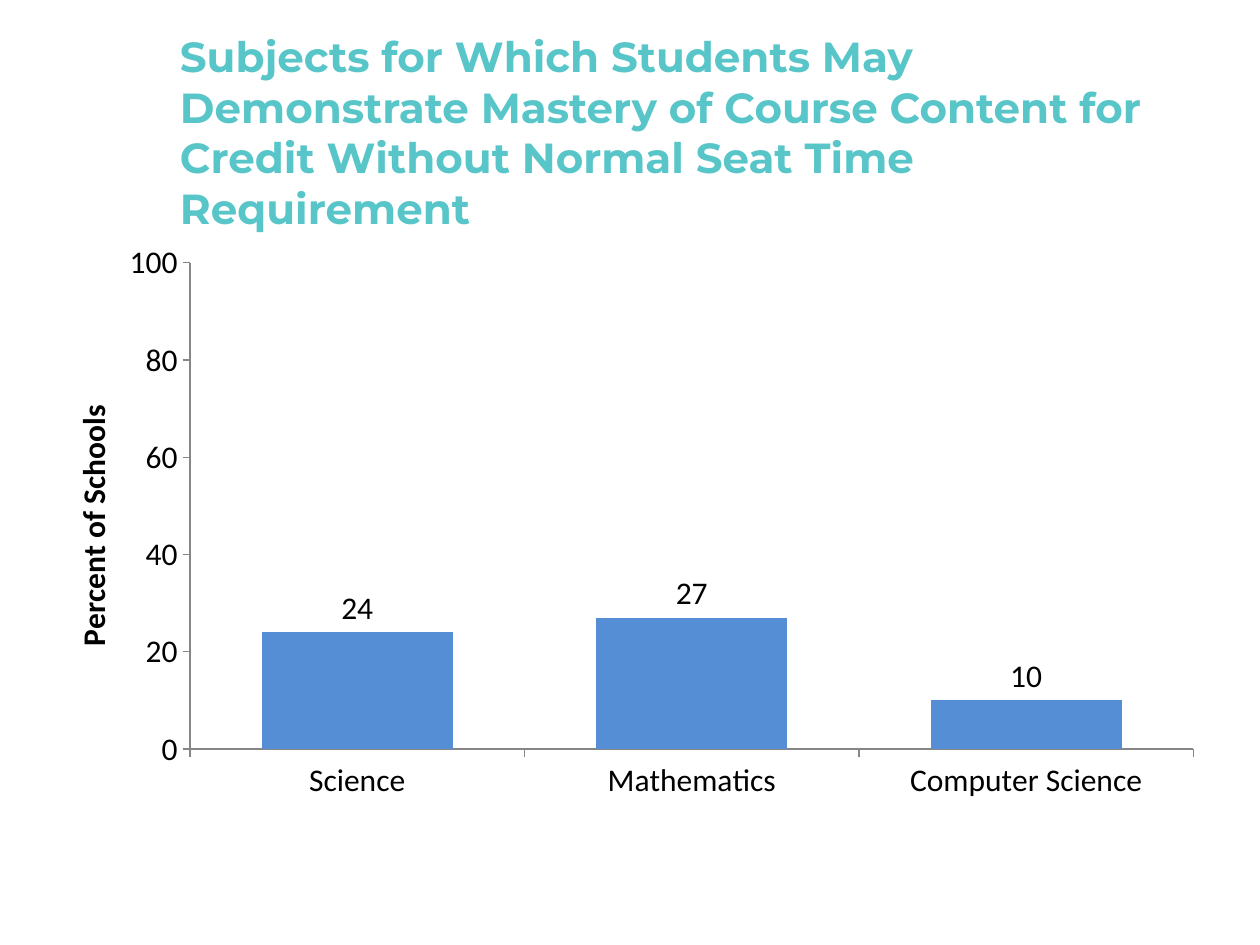
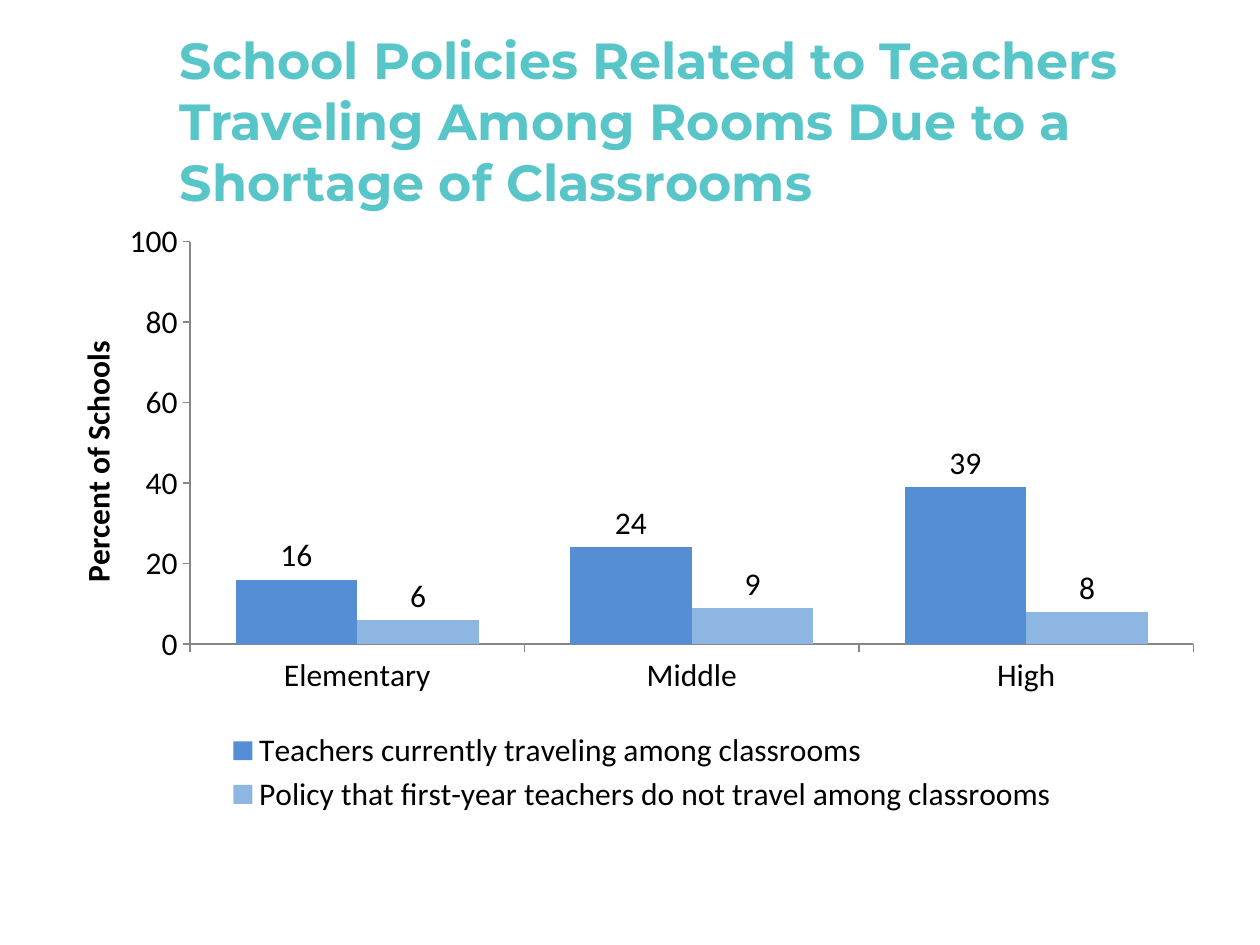
"""Build two slides of column charts on school policies."""
from dataclasses import dataclass

from pptx import Presentation
from pptx import util as u
from pptx.chart.data import CategoryChartData
from pptx.dml.color import RGBColor
from pptx.enum import chart as ch, text
from pptx.oxml import parse_xml
from pptx.oxml.ns import nsdecls, qn

TEAL = RGBColor(0x58, 0xC5, 0xC9)
BLUE = RGBColor(0x55, 0x8E, 0xD5)
PALE = RGBColor(0x8E, 0xB6, 0xE3)
GRAY = RGBColor(0x86, 0x86, 0x86)
BLACK = RGBColor(0, 0, 0)
HEAD, BODY = "Montserrat", "Calibri"


@dataclass
class Page:
    title: str
    size: int
    top: float
    cats: list[str]
    series: dict[str, list[int]]
    plot: dict[str, float]
    label: dict[str, float]
    legend: dict[str, float] | None = None


PAGES = [
    Page(
        "Subjects for Which Students May Demonstrate Mastery of Course Content "
        "for Credit Without Normal Seat Time Requirement",
        24, 0.42,
        ["Science", "Mathematics", "Computer Science"],
        {"Series 1": [24, 27, 10]},
        dict(x=0.122, y=0.131, w=0.861, h=0.76),
        dict(x=0.015, y=0.345),
    ),
    Page(
        "School Policies Related to Teachers Traveling Among Rooms "
        "Due to a Shortage of Classrooms",
        29, 0.33,
        ["Elementary", "Middle", "High"],
        {
            "Teachers currently traveling among classrooms": [16, 24, 39],
            "Policy that first-year teachers do not travel among classrooms": [6, 9, 8],
        },
        dict(x=0.122, y=0.098, w=0.861, h=0.629),
        dict(x=0.019, y=0.245),
        dict(x=0.14, y=0.855, w=0.74, h=0.15),
    ),
]


def place(node, index: int, box: dict[str, float], inner: bool = False) -> None:
    """Give a chart part a fixed place, in fractions of the chart."""
    for old in node.findall(qn("c:layout")):
        node.remove(old)
    parts = '<c:layoutTarget val="inner"/>' if inner else ""
    parts += "".join(f'<c:{key}Mode val="edge"/>' for key in "xy")
    parts += "".join(f'<c:{key} val="{val}"/>' for key, val in box.items())
    node.insert(index, parse_xml(
        f'<c:layout {nsdecls("c")}><c:manualLayout>{parts}</c:manualLayout></c:layout>'))


def add_title(slide, page: Page) -> None:
    """Write the slide title."""
    box = slide.shapes.add_textbox(
        u.Inches(1.33), u.Inches(page.top), u.Inches(8.17), u.Inches(1.25))
    frame = box.text_frame
    frame.word_wrap = True
    frame.vertical_anchor = text.MSO_ANCHOR.MIDDLE
    run = frame.paragraphs[0].add_run()
    run.text = page.title
    run.font.name, run.font.size, run.font.bold = HEAD, u.Pt(page.size), True
    run.font.color.rgb = TEAL


def style_axes(chart, page: Page) -> None:
    """Set the scale, lines and title of the axes."""
    value = chart.value_axis
    value.minimum_scale, value.maximum_scale, value.major_unit = 0, 100, 20
    value.has_major_gridlines = False
    for axis in (value, chart.category_axis):
        axis.major_tick_mark = ch.XL_TICK_MARK.OUTSIDE
        axis.format.line.color.rgb = GRAY
        axis.format.line.width = u.Pt(0.75)
    title = value.axis_title
    run = title.text_frame.paragraphs[0].add_run()
    run.text = "Percent of Schools"
    run.font.name, run.font.size, run.font.bold = BODY, u.Pt(18), True
    run.font.color.rgb = BLACK
    place(title._element, 1, page.label)


def add_chart(slide, page: Page) -> None:
    """Draw the column chart with its labels and legend."""
    data = CategoryChartData()
    data.categories = page.cats
    for name, vals in page.series.items():
        data.add_series(name, vals)
    chart = slide.shapes.add_chart(
        ch.XL_CHART_TYPE.COLUMN_CLUSTERED, u.Inches(0.38), u.Inches(1.42),
        u.Inches(9.25), u.Inches(5.08), data).chart
    chart.has_title = False
    chart.font.name, chart.font.size = BODY, u.Pt(18)
    chart.font.color.rgb = BLACK
    style_axes(chart, page)

    plot = chart.plots[0]
    plot.gap_width, plot.overlap, plot.vary_by_categories = 75, 0, False
    for series, color in zip(plot.series, (BLUE, PALE)):
        series.invert_if_negative = False
        series.format.fill.solid()
        series.format.fill.fore_color.rgb = color
        series.data_labels.show_value = True
        series.data_labels.position = ch.XL_LABEL_POSITION.OUTSIDE_END
    place(chart._chartSpace.chart.plotArea, 0, page.plot, inner=True)

    chart.has_legend = page.legend is not None
    if page.legend:
        chart.legend.position = ch.XL_LEGEND_POSITION.BOTTOM
        chart.legend.include_in_layout = False
        place(chart.legend._element, 1, page.legend)


def main() -> None:
    """Build and save the slides."""
    deck = Presentation()
    deck.slide_width, deck.slide_height = u.Inches(10), u.Inches(7.5)
    for page in PAGES:
        slide = deck.slides.add_slide(deck.slide_layouts[6])
        add_chart(slide, page)
        add_title(slide, page)
    deck.save("out.pptx")


if __name__ == "__main__":
    main()
